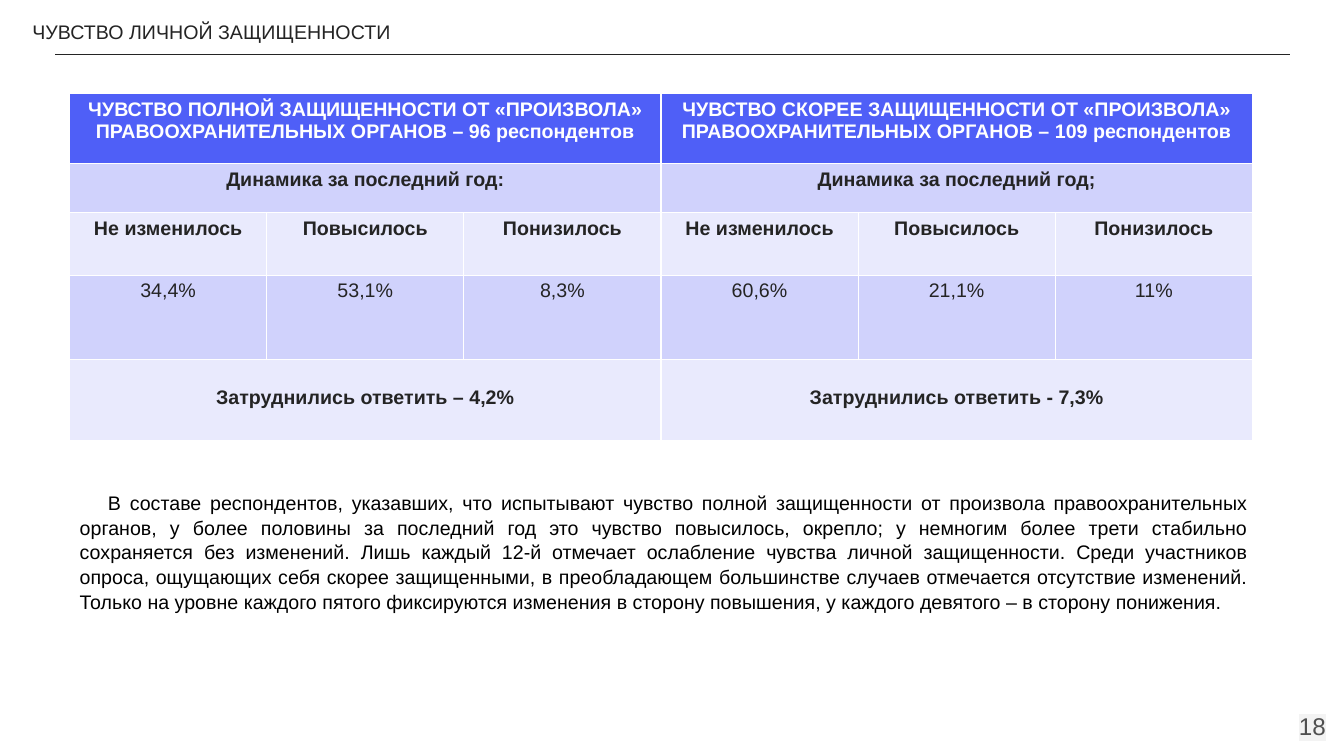
"""Builds the slide on the sense of personal security: title, table and conclusion."""
from dataclasses import dataclass

from lxml import etree
from pptx import Presentation
from pptx.dml.color import RGBColor
from pptx.enum.shapes import MSO_CONNECTOR
from pptx.enum.text import MSO_ANCHOR, MSO_AUTO_SIZE, PP_ALIGN
from pptx.oxml.ns import qn
from pptx.slide import Slide
from pptx.text.text import TextFrame
from pptx.util import Emu, Inches, Pt

STRAIGHT = MSO_CONNECTOR.STRAIGHT
TOP = MSO_ANCHOR.TOP
FIXED_SIZE = MSO_AUTO_SIZE.NONE
LEFT, CENTER, RIGHT, JUSTIFY = PP_ALIGN.LEFT, PP_ALIGN.CENTER, PP_ALIGN.RIGHT, PP_ALIGN.JUSTIFY

PAGE_WIDTH, PAGE_HEIGHT = Inches(13.33), Inches(7.5)
FONT = "Arial"
COLUMNS = 6
COLUMN_SHARE = 14.67
TABLE_LEFT, TABLE_TOP = 5.18, 12.4
COLORS = {
    "white": "FFFFFF",
    "black": "000000",
    "ink": "242424",
    "header": "4F5FF7",
    "dark_band": "D0D2FC",
    "light_band": "E9EAFD",
    "number": "505050",
    "number_back": "F3F3F3",
}
TITLE = "ЧУВСТВО ЛИЧНОЙ ЗАЩИЩЕННОСТИ"
CONCLUSION = (
    "В составе респондентов, указавших, что испытывают чувство полной защищенности от произвола "
    "правоохранительных органов, у более половины за последний год это чувство повысилось, окрепло; "
    "у немногим более трети стабильно сохраняется без изменений. Лишь каждый 12-й отмечает ослабление "
    "чувства личной защищенности. Среди участников опроса, ощущающих себя скорее защищенными, в "
    "преобладающем большинстве случаев отмечается отсутствие изменений. Только на уровне каждого пятого "
    "фиксируются изменения в сторону повышения, у каждого девятого – в сторону понижения."
)


@dataclass(frozen=True)
class Area:
    left: float
    top: float
    width: float
    height: float


@dataclass(frozen=True)
class TextStyle:
    color: str
    align: PP_ALIGN
    size: float = 14
    bold: bool = False


@dataclass(frozen=True)
class Band:
    height: float
    fill: str
    labels: tuple[str, ...]
    color: str = "ink"
    bold: bool = True
    margin_top: float = 0.05


CHANGES = ("Не изменилось", "Повысилось", "Понизилось")
BANDS = (
    Band(9.2, "header", (
        "ЧУВСТВО ПОЛНОЙ ЗАЩИЩЕННОСТИ ОТ «ПРОИЗВОЛА» ПРАВООХРАНИТЕЛЬНЫХ ОРГАНОВ – 96 респондентов",
        "ЧУВСТВО СКОРЕЕ ЗАЩИЩЕННОСТИ ОТ «ПРОИЗВОЛА» ПРАВООХРАНИТЕЛЬНЫХ ОРГАНОВ – 109 респондентов",
    ), color="white"),
    Band(6.53, "dark_band", ("Динамика за последний год:", "Динамика за последний год;")),
    Band(8.27, "light_band", CHANGES * 2),
    Band(11.2, "dark_band", ("34,4%", "53,1%", "8,3%", "60,6%", "21,1%", "11%"), bold=False),
    Band(10.67, "light_band", ("Затруднились ответить – 4,2%", "Затруднились ответить - 7,3%"),
         margin_top=0.27),
)


def across(percent: float) -> Emu:
    return Emu(round(PAGE_WIDTH * percent / 100))


def down(percent: float) -> Emu:
    return Emu(round(PAGE_HEIGHT * percent / 100))


def rgb(name: str) -> RGBColor:
    return RGBColor.from_string(COLORS[name])


def bounds(area: Area) -> tuple[Emu, Emu, Emu, Emu]:
    return across(area.left), down(area.top), across(area.width), down(area.height)


def write(frame: TextFrame, text: str, style: TextStyle) -> None:
    frame.text = text
    para = frame.paragraphs[0]
    para.alignment = style.align
    font = para.runs[0].font
    font.name, font.size, font.bold = FONT, Pt(style.size), style.bold
    font.color.rgb = rgb(style.color)


def fill_placeholder(page: Slide, index: int, area: Area, text: str, style: TextStyle) -> TextFrame:
    box = page.placeholders[index]
    box.left, box.top, box.width, box.height = bounds(area)
    frame = box.text_frame
    frame.word_wrap = True
    frame.auto_size = FIXED_SIZE
    frame.vertical_anchor = TOP
    write(frame, text, style)
    return frame


def add_title(page: Slide) -> None:
    frame = fill_placeholder(page, 0, Area(0, 2, 49.14, 4.53), TITLE, TextStyle("ink", LEFT))
    frame.margin_left = Inches(0.32)


def add_conclusion(page: Slide) -> None:
    area = Area(TABLE_LEFT, 64.13, 88.45, 20.13)
    para = fill_placeholder(page, 1, area, CONCLUSION, TextStyle("black", JUSTIFY)).paragraphs[0]
    para.line_spacing = 1.05
    para.space_before = Pt(0)
    properties = para._p.get_or_add_pPr()
    properties.set("marL", "0")
    properties.set("indent", str(Inches(0.28)))
    etree.SubElement(properties, qn("a:buNone"))


def add_rule(page: Slide) -> None:
    height = down(7.2)
    rule = page.shapes.add_connector(STRAIGHT, across(4.13), height, across(95.95), height)
    rule.line.color.rgb = rgb("ink")
    rule.line.width = Pt(0.75)
    etree.SubElement(rule._element.spPr, qn("a:effectLst"))


def add_page_number(page: Slide) -> None:
    frame = page.shapes.add_textbox(*bounds(Area(93.62, 92.4, 6, 7.6))).text_frame
    frame.word_wrap = True
    frame.margin_left = frame.margin_right = frame.margin_top = frame.margin_bottom = Inches(0.13)
    write(frame, "18", TextStyle("number", RIGHT, size=17.3))
    highlight = etree.Element(qn("a:highlight"))
    etree.SubElement(highlight, qn("a:srgbClr"), val=COLORS["number_back"])
    span = frame.paragraphs[0].runs[0]
    span._r.rPr.find(qn("a:solidFill")).addnext(highlight)


def add_survey_table(page: Slide) -> None:
    area = Area(TABLE_LEFT, TABLE_TOP, COLUMN_SHARE * COLUMNS, sum(band.height for band in BANDS))
    table = page.shapes.add_table(len(BANDS), COLUMNS, *bounds(area)).table
    for column in table.columns:
        column.width = across(COLUMN_SHARE)
    for row, band in enumerate(BANDS):
        table.rows[row].height = down(band.height)
        width = COLUMNS // len(band.labels)
        for position, label in enumerate(band.labels):
            first = position * width
            cell = table.cell(row, first)
            if width > 1:
                cell.merge(table.cell(row, first + width - 1))
            cell.fill.solid()
            cell.fill.fore_color.rgb = rgb(band.fill)
            cell.margin_top = Inches(band.margin_top)
            write(cell.text_frame, label, TextStyle(band.color, CENTER, bold=band.bold))


def main() -> None:
    deck = Presentation()
    deck.slide_width, deck.slide_height = PAGE_WIDTH, PAGE_HEIGHT
    page = deck.slides.add_slide(deck.slide_layouts[1])
    add_rule(page)
    add_page_number(page)
    add_conclusion(page)
    add_title(page)
    add_survey_table(page)
    deck.save("out.pptx")


if __name__ == "__main__":
    main()
